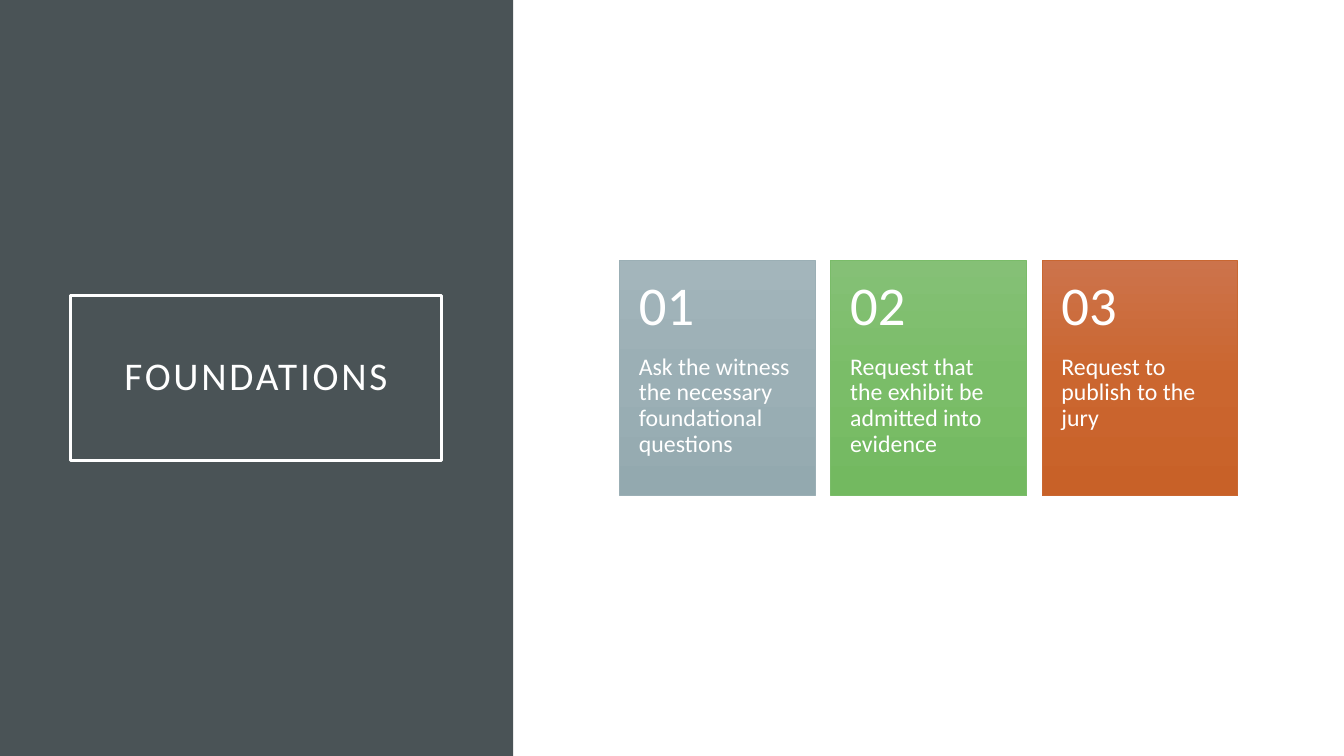
from copy import deepcopy
from dataclasses import dataclass

from pptx import Presentation
from pptx.dml.color import RGBColor
from pptx.enum import shapes, text
from pptx.oxml.ns import qn
from pptx.util import Pt


@dataclass(frozen=True)
class Theme:
    font: str = "Calibri"
    white: str = "FFFFFF"
    panel: str = "4A5356"
    title_size: float = 28
    number_size: float = 39
    body_size: float = 17
    # Each card: gradient top, middle, bottom, then outline
    cards: tuple = (
        ("A3B5BB", "9BAFB5", "93A9AF", "9BAFB5"),
        ("85C076", "7ABD68", "73B960", "7ABC69"),
        ("CC734B", "CB662F", "C86128", "C96731"),
    )


THEME = Theme()
STEPS = (
    "Ask the witness the necessary foundational questions",
    "Request that the exhibit be admitted into evidence",
    "Request to publish to the jury",
)


def rgb(code):
    return RGBColor.from_string(code)


def write(shape, words, size, insets, anchor=text.MSO_ANCHOR.TOP,
          align=text.PP_ALIGN.LEFT, after=0, tracking=0):
    """Fill a shape with one paragraph; insets are left, top, right, bottom."""
    frame = shape.text_frame
    frame.word_wrap = True
    frame.auto_size = text.MSO_AUTO_SIZE.NONE
    frame.vertical_anchor = anchor
    (frame.margin_left, frame.margin_top,
     frame.margin_right, frame.margin_bottom) = map(Pt, insets)
    paragraph = frame.paragraphs[0]
    paragraph.alignment = align
    paragraph.line_spacing = 0.9
    paragraph.space_after = Pt(after)
    run = paragraph.add_run()
    run.text = words
    run.font.name = THEME.font
    run.font.size = Pt(size)
    run.font.color.rgb = rgb(THEME.white)
    if tracking:
        run.font._element.set("spc", str(tracking * 100))


def add_rectangle(slide, left, top, width, height):
    rectangle = slide.shapes.add_shape(
        shapes.MSO_SHAPE.RECTANGLE, Pt(left), Pt(top), Pt(width), Pt(height))
    rectangle.shadow.inherit = False
    return rectangle


def fill_downwards(shape, colours):
    """Apply a three-stop gradient running from top to bottom."""
    shape.fill.gradient()
    shape.fill.gradient_angle = 270
    stop_list = shape._element.spPr.find(qn("a:gradFill")).find(qn("a:gsLst"))
    stop_list.insert(1, deepcopy(stop_list[0]))
    for stop, position, colour in zip(shape.fill.gradient_stops, (0, 0.5, 1), colours):
        stop.position = position
        stop.color.rgb = rgb(colour)


def add_title_panel(slide, left, top, width, height):
    panel = add_rectangle(slide, left, top, width, height)
    panel.fill.solid()
    panel.fill.fore_color.rgb = rgb(THEME.panel)
    panel.line.fill.background()
    slide.shapes._spTree.insert(2, panel._element)  # behind the title

    title = slide.shapes.title
    title.left, title.top = Pt(left + 50.4), Pt(top + 211)
    title.width, title.height = Pt(265), Pt(118)
    title.line.color.rgb = rgb(THEME.white)
    title.line.width = Pt(2.5)
    write(title, "FOUNDATIONS", THEME.title_size, (14.4,) * 4,
          anchor=text.MSO_ANCHOR.MIDDLE, align=text.PP_ALIGN.CENTER, tracking=2)


def add_card(slide, left, top, width, height, number, step, colours):
    *gradient, outline = colours
    card = add_rectangle(slide, left, top, width, height)
    fill_downwards(card, gradient)
    card.line.color.rgb = rgb(outline)
    card.line.width = Pt(0.5)

    number_height = height * 0.4
    body = slide.shapes.add_textbox(
        Pt(left), Pt(top + number_height), Pt(width), Pt(height - number_height))
    write(body, step, THEME.body_size, (13.8, 0, 13.8, 25.9), after=6)
    heading = slide.shapes.add_textbox(Pt(left), Pt(top), Pt(width), Pt(number_height))
    write(heading, f"{number:02}", THEME.number_size, (13.8, 13, 13.8, 13),
          anchor=text.MSO_ANCHOR.MIDDLE, after=13.65)


def add_steps(slide, left, top, width, height, gap=11.1):
    card_width = (width - gap * (len(STEPS) - 1)) / len(STEPS)
    for index, (step, colours) in enumerate(zip(STEPS, THEME.cards)):
        add_card(slide, left + index * (card_width + gap), top, card_width, height,
                 index + 1, step, colours)


def main():
    deck = Presentation()
    deck.slide_width, deck.slide_height = Pt(960), Pt(540)
    slide = deck.slides.add_slide(deck.slide_layouts[5])
    slide.background.fill.solid()
    slide.background.fill.fore_color.rgb = rgb(THEME.white)
    add_title_panel(slide, 0, 0, 366.5, 540)
    add_steps(slide, 442.6, 186.2, 441.6, 167.8)
    deck.save("out.pptx")


if __name__ == "__main__":
    main()
